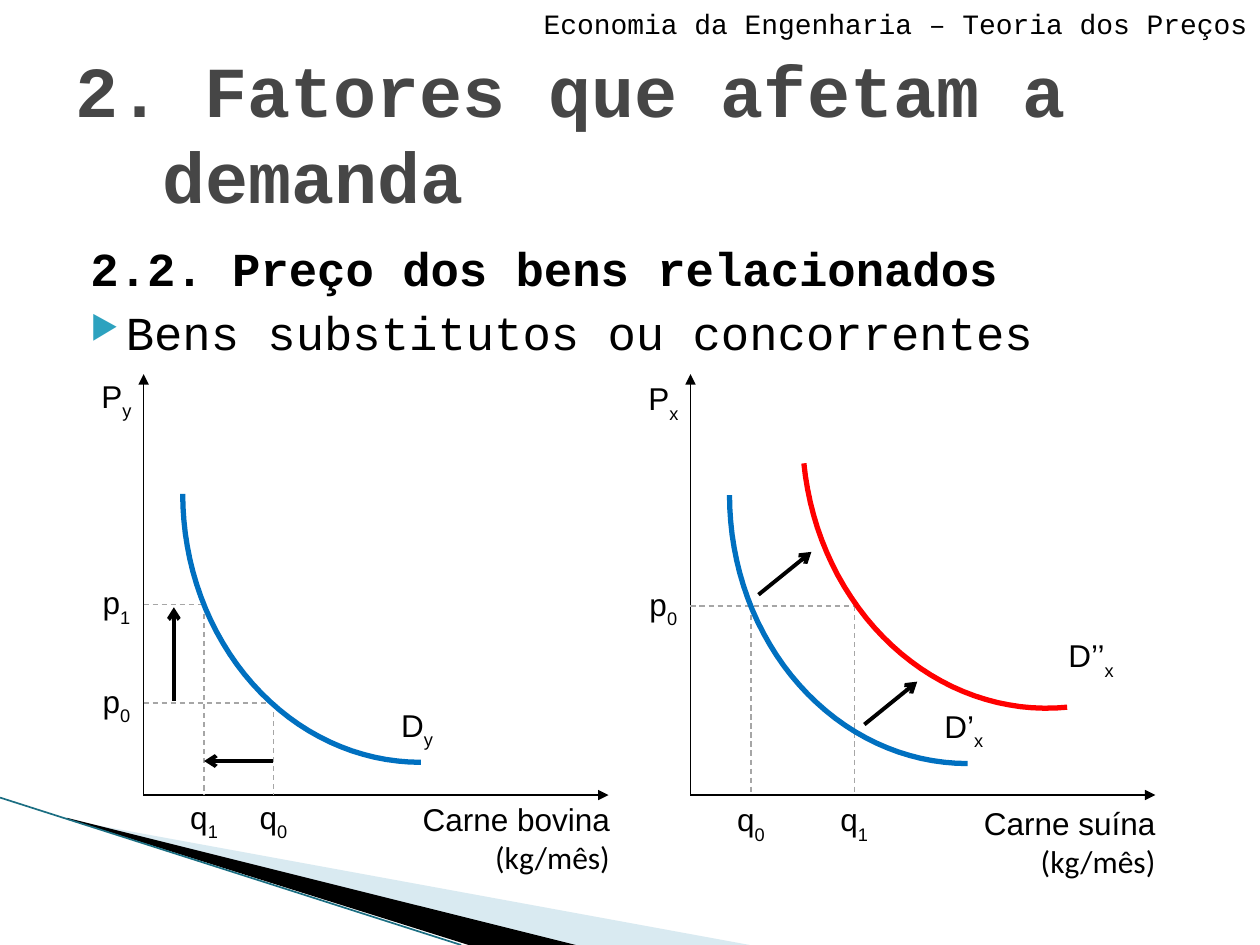
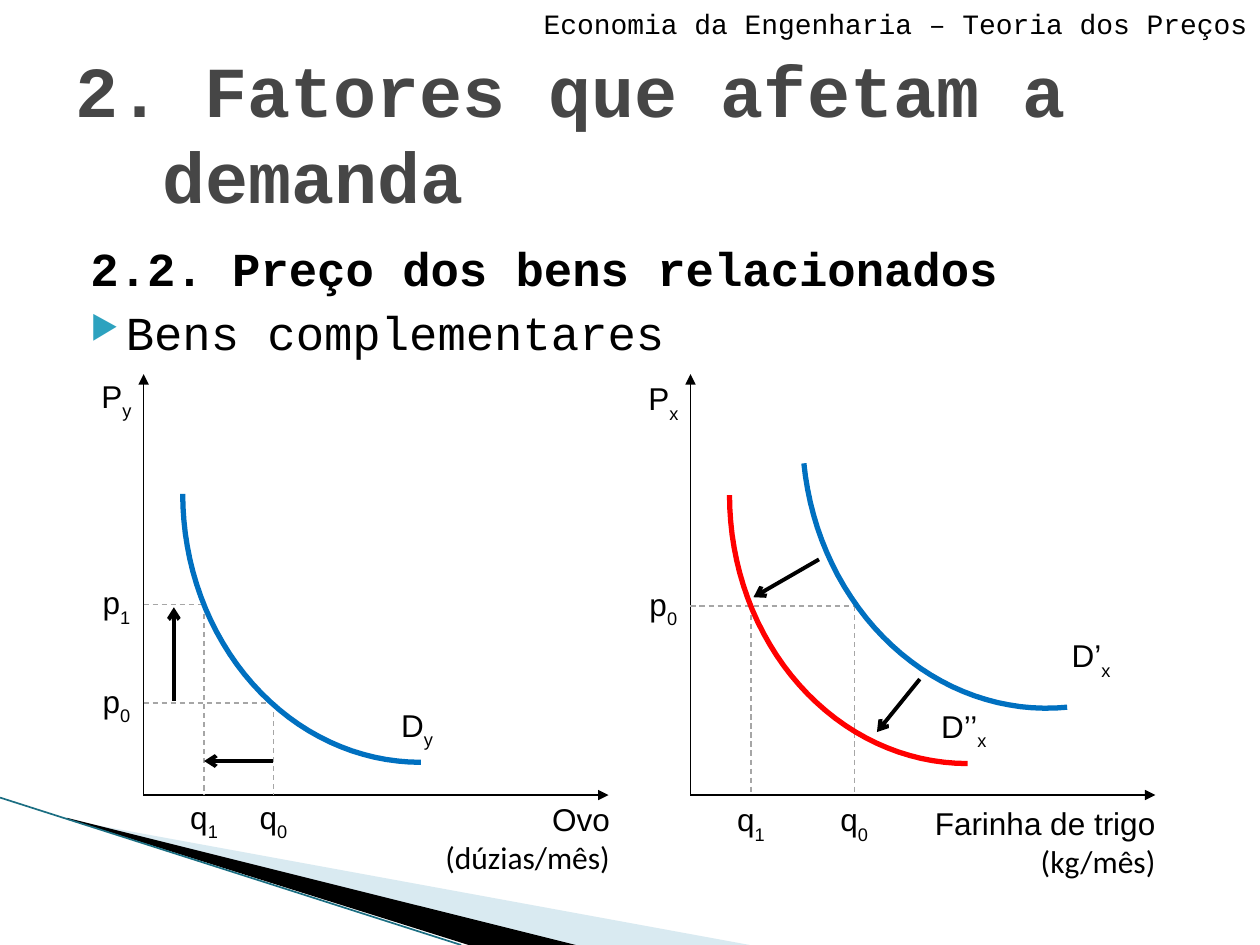
from dataclasses import dataclass
from math import cos, pi, sin
from typing import NamedTuple

from lxml import etree
from pptx import Presentation
from pptx.dml.color import RGBColor
from pptx.enum.dml import MSO_LINE_DASH_STYLE as Dash
from pptx.enum.shapes import MSO_CONNECTOR as Connector, MSO_SHAPE as Shape
from pptx.enum.text import MSO_ANCHOR as Anchor, PP_ALIGN as Align
from pptx.oxml.ns import qn
from pptx.util import Inches, Pt


# Theme
@dataclass(frozen=True)
class Theme:
    black: str = "000000"
    white: str = "FFFFFF"
    title: str = "464646"
    bullet: str = "2DA2BF"
    band: str = "A0CBDC"
    edge: str = "1B6E82"
    guide: str = "A6A6A6"
    blue: str = "0070C0"
    red: str = "FF0000"
    mono: str = "Courier New"
    sans: str = "Arial"
    unit: str = "Calibri"
    title_size: int = 41
    body_size: int = 27
    label_size: int = 18
    header_size: int = 16


T = Theme()


class Box(NamedTuple):
    left: float
    top: float
    width: float
    height: float


class Point(NamedTuple):
    x: float
    y: float


class Style(NamedTuple):
    color: str
    width: float
    dash: bool = False
    head: str = ""
    tail: str = ""


AXIS = Style(T.black, 0.75, head="triangle")
GUIDE = Style(T.guide, 0.75, dash=True)
SHIFT = Style(T.black, 2.25, tail="arrow")
EDGE = Style(T.edge, 0.95)


class Guide(NamedTuple):
    at: Point
    price: str
    quantity: str


class Curve(NamedTuple):
    at: Point
    label_at: Point
    label: str
    color: str
    rotation: float = 180


class Arrow(NamedTuple):
    start: Point
    end: Point


@dataclass(frozen=True)
class Panel:
    axis_x: float
    drop: float  # how far the labels sit below those of the left panel
    price: str
    caption: list[list[str]]  # paragraphs of runs
    caption_box: Box
    caption_fill: str
    guides: list[Guide]
    curves: list[Curve]
    arrows: list[Arrow]


@dataclass(frozen=True)
class Page:
    topic: str
    panels: list[Panel]


AXIS_TOP, AXIS_Y, AXIS_LENGTH = 2.97, 6.31, 3.69
CURVE_W, CURVE_H, CURVE_STEPS = 1.89, 2.13, 32
LABEL_W, LABEL_H = 0.33, 0.35


def rgb(color: str) -> RGBColor:
    return RGBColor.from_string(color)


# Drawing helpers
def add_run(p, text: str, font: str, size: int, color: str = T.black, bold: bool = False):
    r = p.add_run()
    r.text = text
    for name, value in dict(name=font, size=Pt(size), bold=bold).items():
        setattr(r.font, name, value)
    r.font.color.rgb = rgb(color)
    return r


def set_indent(p, margin: float, indent: float) -> None:
    pPr = p._p.get_or_add_pPr()
    pPr.set("marL", str(Inches(margin)))
    pPr.set("indent", str(Inches(indent)))


def add_text(s, box: Box, fill: str = "", inset: bool = True):
    place = [Inches(v) for v in box]
    if fill:
        sp = s.shapes.add_shape(Shape.RECTANGLE, *place)
        sp.shadow.inherit = False
        sp.fill.solid()
        sp.fill.fore_color.rgb = rgb(fill)
        sp.line.fill.background()
    else:
        sp = s.shapes.add_textbox(*place)
    tf = sp.text_frame
    values = dict(word_wrap=True, vertical_anchor=Anchor.TOP)
    if not inset:
        values |= {f"margin_{side}": 0 for side in ("left", "top", "right", "bottom")}
    for name, value in values.items():
        setattr(tf, name, value)
    return tf


def add_label(s, text: str, box: Box) -> None:
    """Centred label whose last character is a subscript."""
    p = add_text(s, box, inset=False).paragraphs[0]
    p.alignment = Align.CENTER
    add_run(p, text[:-1], T.sans, T.label_size)
    r = add_run(p, text[-1], T.sans, T.label_size)
    r.font._element.set("baseline", "-30000")


def add_line(s, start: Point, end: Point, style: Style) -> None:
    cx = s.shapes.add_connector(Connector.STRAIGHT, *[Inches(v) for v in (*start, *end)])
    cx.line.color.rgb = rgb(style.color)
    cx.line.width = Pt(style.width)
    if style.dash:
        cx.line.dash_style = Dash.DASH
    ln = cx.line._get_or_add_ln()
    for tag, kind in (("a:headEnd", style.head), ("a:tailEnd", style.tail)):
        if kind:
            etree.SubElement(ln, qn(tag)).set("type", kind)
    etree.SubElement(cx._element.spPr, qn("a:effectLst"))


def add_outline(s, points: list[Point], close: bool):
    start, *rest = [(Inches(x), Inches(y)) for x, y in points]
    builder = s.shapes.build_freeform(*start)
    builder.add_line_segments(rest, close=close)
    sp = builder.convert_to_shape()
    sp.shadow.inherit = False
    return sp


def add_band(s, points: list[Point], color: str, alpha: int = 100) -> None:
    sp = add_outline(s, points, close=True)
    sp.fill.solid()
    sp.fill.fore_color.rgb = rgb(color)
    sp.line.fill.background()
    if alpha < 100:
        clr = sp._element.spPr.find(".//" + qn("a:srgbClr"))
        etree.SubElement(clr, qn("a:alpha")).set("val", str(alpha * 1000))


def add_curve(s, curve: Curve) -> None:
    """Quarter ellipse, turned into a demand curve by its rotation."""
    angles = [i * pi / 2 / CURVE_STEPS for i in range(CURVE_STEPS + 1)]
    x, y = curve.at
    sp = add_outline(s, [Point(x + CURVE_W * sin(a), y + CURVE_H * (1 - cos(a)))
                         for a in angles], close=False)
    sp.fill.background()
    sp.line.color.rgb = rgb(curve.color)
    sp.line.width = Pt(3)
    sp.rotation = curve.rotation
    add_label(s, curve.label, Box(*curve.label_at, 0.4, 0.38))


# Shared slide parts
def add_frame(s, topic: str) -> None:
    add_band(s, [Point(0.55, 6.51), Point(5.95, 7.5), Point(4.56, 7.5), Point(0.55, 6.5)],
             T.band, 40)
    add_band(s, [Point(0.53, 6.49), Point(4.57, 7.5), Point(3.72, 7.5), Point(0.54, 6.5)],
             T.black)
    add_line(s, Point(0, 6.33), Point(3.66, 7.5), EDGE)

    # Section heading and bullet
    tf = add_text(s, Box(0.5, 1.79, 9, 1.25))
    tf.margin_top = Inches(0.11)
    p = tf.paragraphs[0]
    set_indent(p, 0.12, 0)
    add_run(p, "2.2. Preço dos bens relacionados", T.mono, T.body_size, bold=True)
    p = tf.add_paragraph()
    p.space_before = Pt(4)
    set_indent(p, 0.4, -0.28)
    pPr = p._p.get_or_add_pPr()
    etree.SubElement(etree.SubElement(pPr, qn("a:buClr")), qn("a:srgbClr")).set("val", T.bullet)
    etree.SubElement(pPr, qn("a:buSzPct")).set("val", "68000")
    etree.SubElement(pPr, qn("a:buChar")).set("char", "▶")
    add_run(p, topic, T.mono, T.body_size)

    # Title
    tf = add_text(s, Box(0.5, 0.3, 9, 1.5))
    tf.vertical_anchor = Anchor.MIDDLE
    p = tf.paragraphs[0]
    set_indent(p, 0.69, -0.69)
    add_run(p, "2. Fatores que afetam a demanda", T.mono, T.title_size, T.title, True)

    # Running header
    p = add_text(s, Box(0, 0, 10, 0.35)).paragraphs[0]
    p.alignment = Align.RIGHT
    add_run(p, "Economia da Engenharia – Teoria dos Preços", T.mono, T.header_size)


def add_panel(s, panel: Panel) -> None:
    x, label_x = panel.axis_x, panel.axis_x - 0.38

    # Caption, axes and price label
    tf = add_text(s, panel.caption_box, panel.caption_fill, inset=False)
    fonts = iter((T.sans, T.unit))
    for i, runs in enumerate(panel.caption):
        p = tf.add_paragraph() if i else tf.paragraphs[0]
        p.alignment = Align.RIGHT
        for text in runs:
            add_run(p, text, next(fonts), T.label_size)
    add_line(s, Point(x, AXIS_TOP), Point(x, AXIS_Y + 0.01), AXIS)
    add_line(s, Point(x + AXIS_LENGTH, AXIS_Y), Point(x, AXIS_Y), AXIS)
    add_label(s, panel.price, Box(label_x, 2.99 + panel.drop, LABEL_W, LABEL_H))

    # Dashed guides
    for (gx, gy), price, quantity in panel.guides:
        add_label(s, quantity, Box(gx - LABEL_W / 2, 6.33 + panel.drop, LABEL_W, LABEL_H))
        add_line(s, Point(gx, gy), Point(gx, AXIS_Y), GUIDE)
        if price:
            add_label(s, price, Box(label_x, gy - 0.17, LABEL_W, LABEL_H))
            add_line(s, Point(x, gy), Point(gx, gy), GUIDE)

    for curve in panel.curves:
        add_curve(s, curve)
    for arrow in panel.arrows:
        add_line(s, arrow.start, arrow.end, SHIFT)


# Content
def price_panel(caption: list[list[str]]) -> Panel:
    return Panel(
        1.14, 0, "Py", caption, Box(2.69, 6.35, 2.15, 0.64), "",
        [Guide(Point(1.62, 4.8), "p1", "q1"), Guide(Point(2.17, 5.58), "p0", "q0")],
        [Curve(Point(1.45, 3.92), Point(3.11, 5.6), "Dy", T.blue)],
        [Arrow(Point(1.38, 5.56), Point(1.38, 4.82)),
         Arrow(Point(2.17, 6.04), Point(1.62, 6.04))])


def shift_panel(caption: list[list[str]], rises: bool, arrows: list[Arrow]) -> Panel:
    before, after = ("D’x", T.blue), ("D’’x", T.red)
    inner, outer = (before, after) if rises else (after, before)
    near, far = ("q0", "q1") if rises else ("q1", "q0")
    return Panel(
        5.48, 0.02, "Px", caption, Box(7.28, 6.38, 1.89, 0.58), T.white,
        [Guide(Point(5.96, 4.81), "", near), Guide(Point(6.78, 4.81), "p0", far)],
        [Curve(Point(6.48, 3.58), Point(8.46, 5.05), *outer, 174.4),
         Curve(Point(5.79, 3.93), Point(7.45, 5.61), *inner)],
        arrows)


PAGES = [
    Page("Bens substitutos ou concorrentes", [
        price_panel([["Carne bovina", " (kg/mês)"]]),
        shift_panel([["Carne suína", " (kg/mês)"]], True,
                    [Arrow(Point(6.02, 4.72), Point(6.44, 4.38)),
                     Arrow(Point(6.86, 5.75), Point(7.28, 5.41))])]),
    Page("Bens complementares", [
        price_panel([["Ovo"], ["(dúzias/mês)"]]),
        shift_panel([["Farinha de trigo"], ["(kg/mês)"]], False,
                    [Arrow(Point(6.5, 4.44), Point(5.98, 4.74)),
                     Arrow(Point(7.3, 5.39), Point(6.96, 5.81))])]),
]


def main() -> None:
    prs = Presentation()
    prs.slide_width, prs.slide_height = Inches(10), Inches(7.5)
    for page in PAGES:
        s = prs.slides.add_slide(prs.slide_layouts[6])
        add_frame(s, page.topic)
        for panel in page.panels:
            add_panel(s, panel)
    prs.save("out.pptx")


if __name__ == "__main__":
    main()
